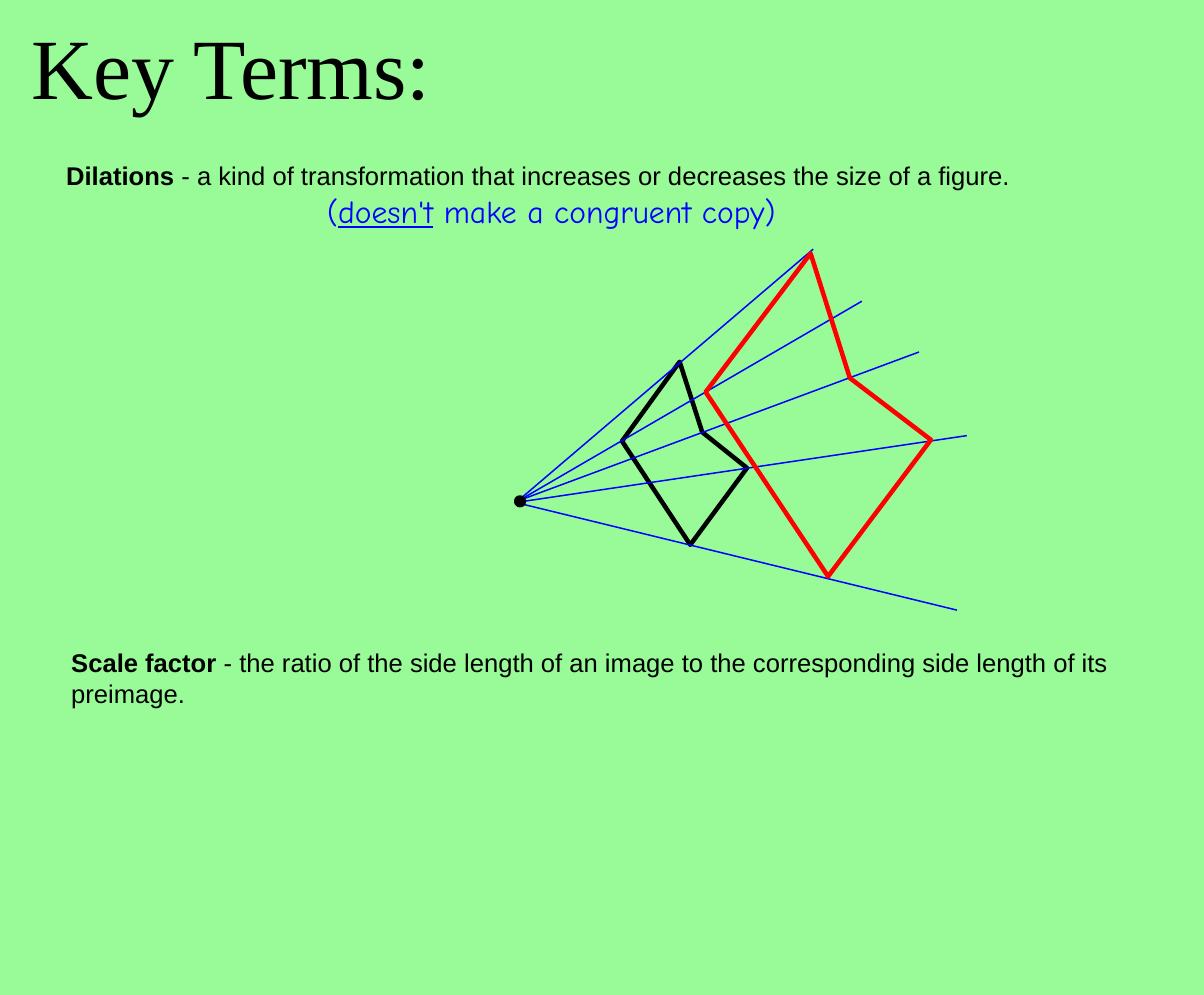
from lxml import etree
from pptx import Presentation
from pptx.dml.color import RGBColor
from pptx.enum.shapes import MSO_CONNECTOR, MSO_SHAPE
from pptx.enum.text import MSO_AUTO_SIZE
from pptx.oxml.ns import qn
from pptx.util import Cm, Pt

STRAIGHT = MSO_CONNECTOR.STRAIGHT
OVAL = MSO_SHAPE.OVAL
GROW = MSO_AUTO_SIZE.SHAPE_TO_FIT_TEXT

GREEN, BLACK, BLUE, RED = "98FB98", "000000", "0000FF", "FF0000"

PREIMAGE = [(4.39, 4.29), (5.44, 5.13), (4.11, 6.93), (2.51, 4.5), (3.86, 2.64)]
IMAGE = [(7.85, 3.02), (9.75, 4.47), (7.34, 7.67), (4.47, 3.35), (6.93, 0.1)]
RAYS = [
    ((0.08, 5.89), (6.99, 0)),
    ((0.13, 5.87), (8.13, 1.22)),
    ((0.15, 5.87), (9.47, 2.41)),
    ((0, 5.94), (10.59, 4.37)),
    ((0.03, 5.94), (10.36, 8.46)),
]
CENTER = (0.03, 5.82)
CENTER_SIZE = 0.18


def color(hex_code):
    return RGBColor.from_string(hex_code)


def set_line(part, hex_code, width):
    part.line.color.rgb = color(hex_code)
    part.line.width = Pt(width)


def add_run(paragraph, text, font="Arial", size=17, hex_code=BLACK, bold=False, underline=False):
    run = paragraph.add_run()
    run.text = text
    run.font.name = font
    run.font.size = Pt(size)
    run.font.color.rgb = color(hex_code)
    run.font.bold = bold
    run.font.underline = underline


def add_paragraph_box(slide, left, top, width, height):
    frame = slide.shapes.add_textbox(Cm(left), Cm(top), Cm(width), Cm(height)).text_frame
    frame.word_wrap = True
    frame.auto_size = GROW
    return frame.paragraphs[0]


def add_title(slide, left, top, width, height):
    title = add_paragraph_box(slide, left, top, width, height)
    add_run(title, "Key Terms:", font="Times New Roman", size=57)


def add_definition(slide, left, top, width, height, term, meaning):
    definition = add_paragraph_box(slide, left, top, width, height)
    add_run(definition, term, bold=True)
    add_run(definition, " - " + meaning)


def add_remark(slide, left, top, width, height):
    remark = add_paragraph_box(slide, left, top, width, height)
    for text, underline in [("(", False), ("doesn't", True), (" make a congruent copy)", False)]:
        add_run(remark, text, font="Comic Neue", size=21, hex_code=BLUE, underline=underline)


def add_dilation(slide, left, top):
    diagram = slide.shapes.add_group_shape().shapes

    def place(point):
        return Cm(left + point[0]), Cm(top + point[1])

    def add_figure(corners, hex_code):
        start, *others = map(place, corners)
        outline = diagram.build_freeform(*start)
        outline.add_line_segments(others, close=True)
        figure = outline.convert_to_shape()
        figure.shadow.inherit = False
        figure.fill.background()
        set_line(figure, hex_code, 3)

    add_figure(PREIMAGE, BLACK)
    for start, end in RAYS:
        ray = diagram.add_connector(STRAIGHT, *place(start), *place(end))
        set_line(ray, BLUE, 1)
        etree.SubElement(ray._element.spPr, qn("a:effectLst"))
    center = diagram.add_shape(OVAL, *place(CENTER), Cm(CENTER_SIZE), Cm(CENTER_SIZE))
    center.shadow.inherit = False
    center.fill.solid()
    center.fill.fore_color.rgb = color(BLACK)
    set_line(center, BLACK, 3)
    add_figure(IMAGE, RED)


def add_key_terms_slide(deck):
    slide = deck.slides.add_slide(deck.slide_layouts[6])
    slide.background.fill.solid()
    slide.background.fill.fore_color.rgb = color(GREEN)
    add_title(slide, 0.48, 0.2, 14.96, 2.69)
    add_definition(slide, 1.3, 3.63, 26.6, 1, "Dilations",
                   "a kind of transformation that increases or decreases the size of a figure.")
    add_dilation(slide, 12.07, 5.84)
    add_remark(slide, 7.42, 4.37, 15.67, 1.14)
    add_definition(slide, 1.42, 15.04, 26.6, 1.7, "Scale factor",
                   "the ratio of the side length of an image to the corresponding "
                   "side length of its preimage.")


def main():
    deck = Presentation()
    deck.slide_width = Cm(28.22)
    deck.slide_height = Cm(23.32)
    add_key_terms_slide(deck)
    deck.save("out.pptx")


if __name__ == "__main__":
    main()
